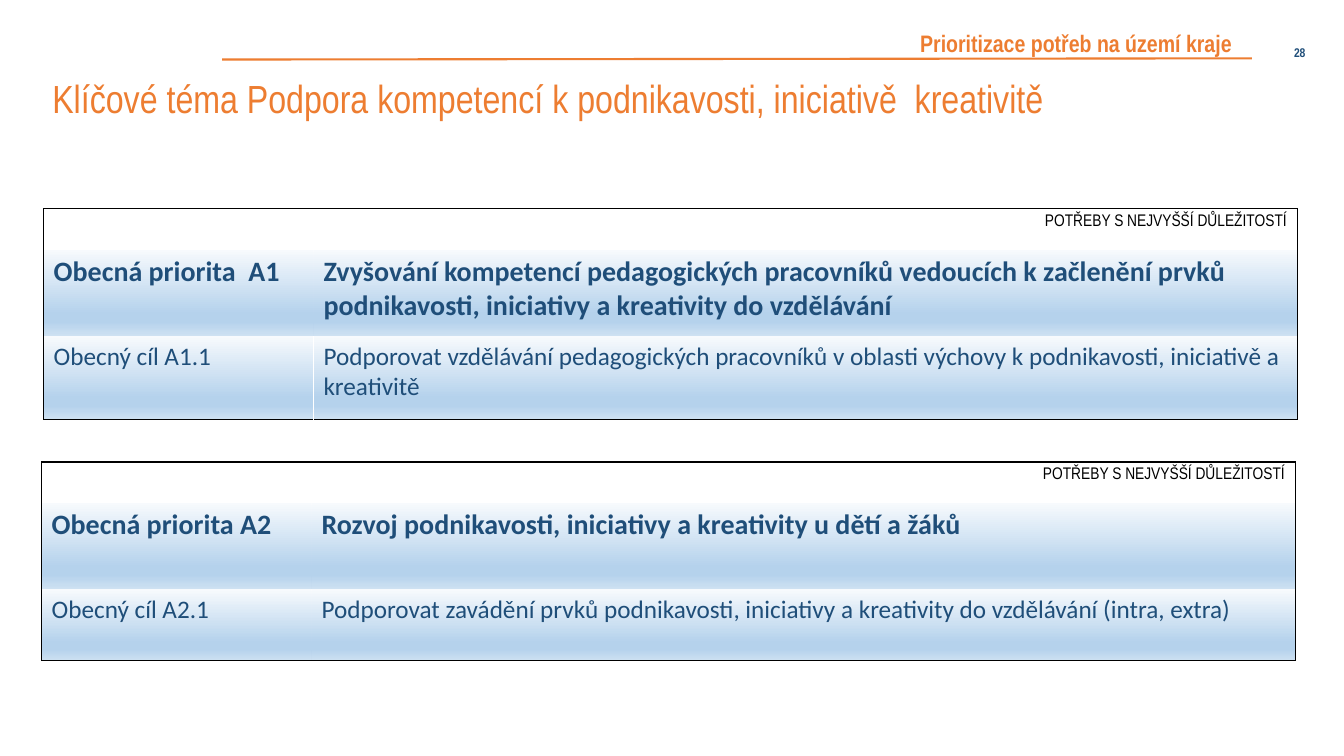
from lxml import etree
from pptx import Presentation
from pptx.dml.color import RGBColor
from pptx.enum import shapes, text
from pptx.oxml import ns
from pptx.util import Cm, Pt

COLORS = {"orange": "ED7D31", "navy": "1F4E79", "black": "000000", "white": "FFFFFF"}
GRADIENT = [(0, "F7FAFD"), (74, "B5D2EC"), (83, "B5D2EC"), (100, "CEE1F2")]
NARROW, BODY = "Arial Narrow", "Calibri"
NO_STYLE = "{2D5ABB26-0587-4C30-8999-92F81FD0307C}"

TITLE = "Klíčové téma Podpora kompetencí k podnikavosti, iniciativě  kreativitě"
SECTION = "Prioritizace potřeb na území kraje"
PAGE = "28"
IMPORTANCE = "POTŘEBY S NEJVYŠŠÍ DŮLEŽITOSTÍ"
COL_WIDTHS = (6.8, 24.79)
TABLES = [
    {"at": (1.1, 5.26), "heights": (1.03, 2.18, 2.11), "divider": True, "rows": [
        ("Obecná priorita  A1",
         "Zvyšování kompetencí pedagogických pracovníků vedoucích k začlenění prvků "
         "podnikavosti, iniciativy a kreativity do vzdělávání"),
        ("Obecný cíl A1.1",
         "Podporovat vzdělávání pedagogických pracovníků v oblasti výchovy k podnikavosti, "
         "iniciativě a kreativitě")]},
    {"at": (1.05, 11.64), "heights": (1.03, 2.18, 1.8), "divider": False, "rows": [
        ("Obecná priorita A2",
         "Rozvoj podnikavosti, iniciativy a kreativity u dětí a žáků"),
        ("Obecný cíl A2.1",
         "Podporovat zavádění prvků podnikavosti, iniciativy a kreativity "
         "do vzdělávání (intra, extra)")]},
]


def write(tf, words, size, color, font=NARROW, bold=False, align="LEFT", spacing=None):
    """Put one formatted paragraph into a text frame."""
    p = tf.paragraphs[0]
    p.alignment = getattr(text.PP_ALIGN, align)
    if spacing:
        p.line_spacing = spacing
    r = p.add_run()
    r.text = words
    r.font.size, r.font.bold, r.font.name = Pt(size), bold, font
    r.font.color.rgb = RGBColor.from_string(COLORS[color])


def add_text(slide, box, words, anchor="MIDDLE", **fmt):
    """Add a wrapping text box."""
    tf = slide.shapes.add_textbox(*map(Cm, box)).text_frame
    tf.word_wrap = True
    tf.vertical_anchor = getattr(text.MSO_ANCHOR, anchor)
    write(tf, words, **fmt)


def add_color(parent, value):
    """Append an RGB colour element."""
    etree.SubElement(parent, ns.qn("a:srgbClr"), val=value)


def style_cell(cell, borders, shaded):
    """Draw the listed cell edges and the gradient."""
    tc_pr = cell._tc.get_or_add_tcPr()
    for side in "LRTB":
        if side in borders:
            ln = etree.SubElement(tc_pr, ns.qn("a:ln" + side), w=str(Pt(1)))
            add_color(etree.SubElement(ln, ns.qn("a:solidFill")), COLORS[borders[side]])
    if not shaded:
        etree.SubElement(tc_pr, ns.qn("a:noFill"))
        return
    grad = etree.SubElement(tc_pr, ns.qn("a:gradFill"), rotWithShape="1")
    stops = etree.SubElement(grad, ns.qn("a:gsLst"))
    for pos, value in GRADIENT:
        add_color(etree.SubElement(stops, ns.qn("a:gs"), pos=str(pos * 1000)), value)
    etree.SubElement(grad, ns.qn("a:lin"), ang="5400000", scaled="0")


def add_priority_table(slide, at, heights, divider, rows):
    """Add one framed table with its priority and goal."""
    size = sum(COL_WIDTHS), sum(heights)
    frame = slide.shapes.add_table(len(heights), 2, *map(Cm, at + size))
    table = frame.table
    table.first_row = table.horz_banding = False
    table._tbl.tblPr.find(ns.qn("a:tableStyleId")).text = NO_STYLE
    for col, width in zip(table.columns, COL_WIDTHS):
        col.width = Cm(width)
    last = len(heights) - 1
    for i, words in enumerate([("", IMPORTANCE)] + rows):
        table.rows[i].height = Cm(heights[i])
        for j, value in enumerate(words):
            cell = table.cell(i, j)
            borders = {"LR"[j]: "black"}
            if i == 0:
                borders["T"] = "black"
                write(cell.text_frame, value, 12, "black", align="RIGHT")
            else:
                write(cell.text_frame, value, 20 if i == 1 else 18, "navy", BODY, bold=i == 1)
            if i == last:
                borders["B"] = "black"
                if divider:
                    borders["RL"[j]] = "white"
            style_cell(cell, borders, shaded=i > 0)


def main():
    """Build the slide."""
    prs = Presentation()
    prs.slide_width, prs.slide_height = Cm(33.87), Cm(19.05)
    slide = prs.slides.add_slide(prs.slide_layouts[6])

    rule = slide.shapes.add_connector(
        shapes.MSO_CONNECTOR.STRAIGHT, Cm(5.6), Cm(1.5), Cm(31.55), Cm(1.47))
    rule.line.color.rgb = RGBColor.from_string(COLORS["orange"])
    rule.line.width = Pt(1.5)
    etree.SubElement(rule._element.spPr, ns.qn("a:effectLst"))

    add_text(slide, (1.07, 1.75, 32.8, 1.57), TITLE, size=28, color="orange", spacing=0.9)
    for spec in TABLES:
        add_priority_table(slide, **spec)
    add_text(slide, (31.15, 0.81, 2, 1.02), PAGE, size=9, color="navy", bold=True, align="RIGHT")
    add_text(slide, (22.94, 0.79, 8.6, 0.79), SECTION, "BOTTOM",
             size=17, color="orange", bold=True, spacing=0.9)
    prs.save("out.pptx")


if __name__ == "__main__":
    main()
